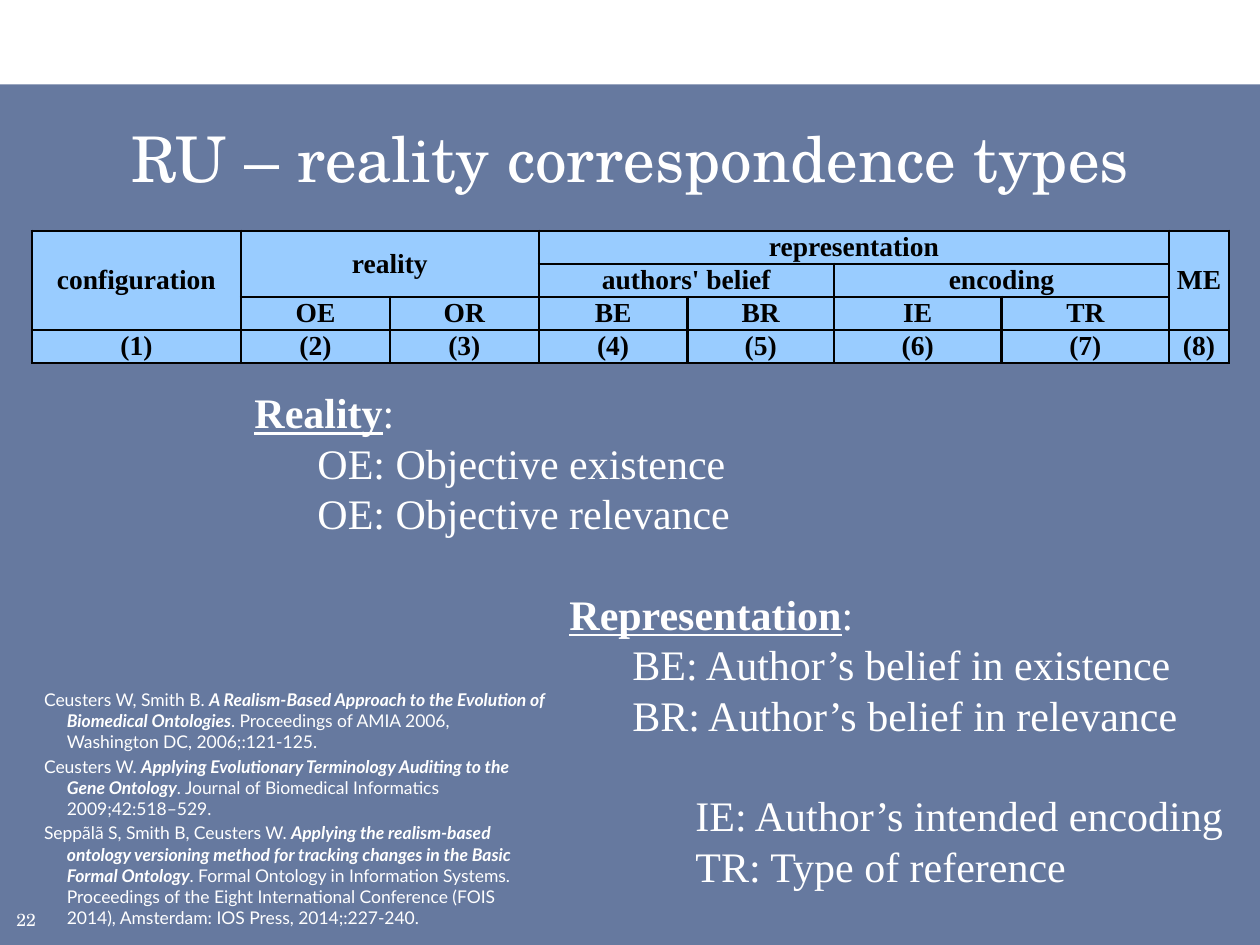
from lxml import etree
from pptx import Presentation
from pptx import util as u
from pptx.dml import color
from pptx.enum import shapes, text
from pptx.oxml import ns

WHITE, BLACK, NAVY, SKY = "FFFFFF", "000000", "002060", "99CCFF"
SERIF, TITLE, SANS = "Times New Roman", "TeX Gyre Schola", "Lato"
MID = text.MSO_ANCHOR.MIDDLE
CENTER = text.PP_ALIGN.CENTER

COLS = [4.22, 3, 3, 3, 2.95, 3.38, 3.38, 1.2]
# row, column, rows spanned, columns spanned, label
HEADS = [
    (0, 0, 3, 1, "configuration"), (0, 1, 2, 2, "reality"),
    (0, 3, 1, 4, "representation"), (0, 7, 3, 1, "ME"),
    (1, 3, 1, 2, "authors' belief"), (1, 5, 1, 2, "encoding"),
]
CODES = ["OE", "OR", "BE", "BR", "IE", "TR"]

# indent steps, blank line above, term, is a heading
TERMS = [
    (0, False, "Reality", True),
    (1, False, "OE: Objective existence", False),
    (1, False, "OE: Objective relevance", False),
    (5, True, "Representation", True),
    (6, False, "BE: Author’s belief in existence", False),
    (6, False, "BR: Author’s belief in relevance", False),
    (7, True, "IE: Author’s intended encoding", False),
    (7, False, "TR: Type of reference", False),
]
REFS = [
    ("Ceusters W, Smith B. ",
     "A Realism-Based Approach to the Evolution of Biomedical Ontologies",
     ". Proceedings of AMIA 2006, Washington DC, 2006;:121-125."),
    ("Ceusters W. ",
     "Applying Evolutionary Terminology Auditing to the Gene Ontology",
     ". Journal of Biomedical Informatics 2009;42:518–529."),
    ("Seppãlã S, Smith B, Ceusters W. ",
     "Applying the realism-based ontology versioning method for tracking "
     "changes in the Basic Formal Ontology",
     ". Formal Ontology in Information Systems. Proceedings of the Eight "
     "International Conference (FOIS 2014), Amsterdam: IOS Press, "
     "2014;:227-240."),
]


def rgb(code):
    return color.RGBColor.from_string(code)


def cm(box):
    return [u.Cm(v) for v in box]


def write(para, words, name, size, ink=WHITE, **marks):
    """Add one run with the given font."""
    run = para.add_run()
    run.text = words
    form = dict(name=name, size=u.Pt(size), **marks)
    for key, val in form.items():
        setattr(run.font, key, val)
    run.font.color.rgb = rgb(ink)


def frame(slide, box, anchor=text.MSO_ANCHOR.TOP):
    body = slide.shapes.add_textbox(*cm(box)).text_frame
    body.word_wrap = True
    body.vertical_anchor = anchor
    return body


def next_para(body, count):
    return body.add_paragraph() if count else body.paragraphs[0]


def indent(para, left, first=0):
    props = para._p.get_or_add_pPr()
    props.set("marL", str(u.Cm(left)))
    props.set("indent", str(u.Cm(first)))


def panel(slide, box):
    """Translucent ground below the white band."""
    rect = slide.shapes.add_shape(shapes.MSO_SHAPE.RECTANGLE, *cm(box))
    rect.shadow.inherit = False
    rect.line.fill.background()
    rect.fill.solid()
    rect.fill.fore_color.rgb = rgb(NAVY)
    tint = rect.fill._xPr.find(".//" + ns.qn("a:srgbClr"))
    etree.SubElement(tint, ns.qn("a:alpha"), val="60000")


def title(slide, box):
    para = frame(slide, box, MID).paragraphs[0]
    para.alignment = CENTER
    write(para, "RU – reality correspondence types", TITLE, 36)


def number(slide, box):
    write(frame(slide, box).paragraphs[0], "22", TITLE, 10)


def style(cell):
    """Borders first, then fill, as the schema orders them."""
    props = cell._tc.get_or_add_tcPr()
    for side in ("lnL", "lnR", "lnT", "lnB"):
        line = etree.SubElement(props, ns.qn("a:" + side), w=str(u.Pt(1.5)))
        fill = etree.SubElement(line, ns.qn("a:solidFill"))
        etree.SubElement(fill, ns.qn("a:srgbClr"), val=BLACK)
    cell.fill.solid()
    cell.fill.fore_color.rgb = rgb(SKY)
    cell.vertical_anchor = MID
    for side in ("left", "right", "top", "bottom"):
        setattr(cell, "margin_" + side, 0)
    cell.text_frame.paragraphs[0].font.size = u.Pt(10)


def grid(slide, box):
    table = slide.shapes.add_table(4, len(COLS), *cm(box)).table
    table.first_row = table.horz_banding = False
    for col, width in zip(table.columns, COLS):
        col.width = u.Cm(width)
    for row in table.rows:
        row.height = u.Cm(box[3] / 4)
    for cell in table.iter_cells():
        style(cell)
    parts = HEADS + [(2, i, 1, 1, c) for i, c in enumerate(CODES, 1)]
    parts += [(3, i, 1, 1, f"({i + 1})") for i in range(len(COLS))]
    for row, col, high, wide, label in parts:
        cell = table.cell(row, col)
        if high * wide > 1:
            cell.merge(table.cell(row + high - 1, col + wide - 1))
        para = cell.text_frame.paragraphs[0]
        para.alignment = CENTER
        write(para, label, SERIF, 15.7, BLACK, bold=True)


def terms(slide, box):
    body, pitch = frame(slide, box), u.Pt(28.8)
    for i, (step, gap, words, head) in enumerate(TERMS):
        para = next_para(body, i)
        indent(para, 1.27 * step if step < 5 else 1.27 * step)
        para.line_spacing = pitch
        para.space_before = pitch if gap else 0
        write(para, words, SERIF, 24, bold=head, underline=head)
        if head:
            write(para, ":", SERIF, 24)


def sources(slide, box):
    body = frame(slide, box)
    for i, (names, work, rest) in enumerate(REFS):
        para = next_para(body, i)
        indent(para, 0.46, -0.46)
        para.space_before = u.Pt(2 if i else 0)
        write(para, names, SANS, 10)
        write(para, work, SANS, 10, bold=True, italic=True)
        write(para, rest, SANS, 10)


def main():
    deck = Presentation()
    deck.slide_width, deck.slide_height = cm((25.4, 19.05))
    slide = deck.slides.add_slide(deck.slide_layouts[6])
    panel(slide, (0, 1.7, 25.4, 17.35))
    number(slide, (0.08, 18.21, 0.99, 0.64))
    title(slide, (0.64, 2.11, 24.13, 2.11))
    grid(slide, (0.64, 4.65, 24.13, 2.64))
    terms(slide, (4.88, 7.67, 20.52, 10.52))
    sources(slide, (0.64, 13.77, 10.59, 5.08))
    deck.save("out.pptx")


if __name__ == "__main__":
    main()
